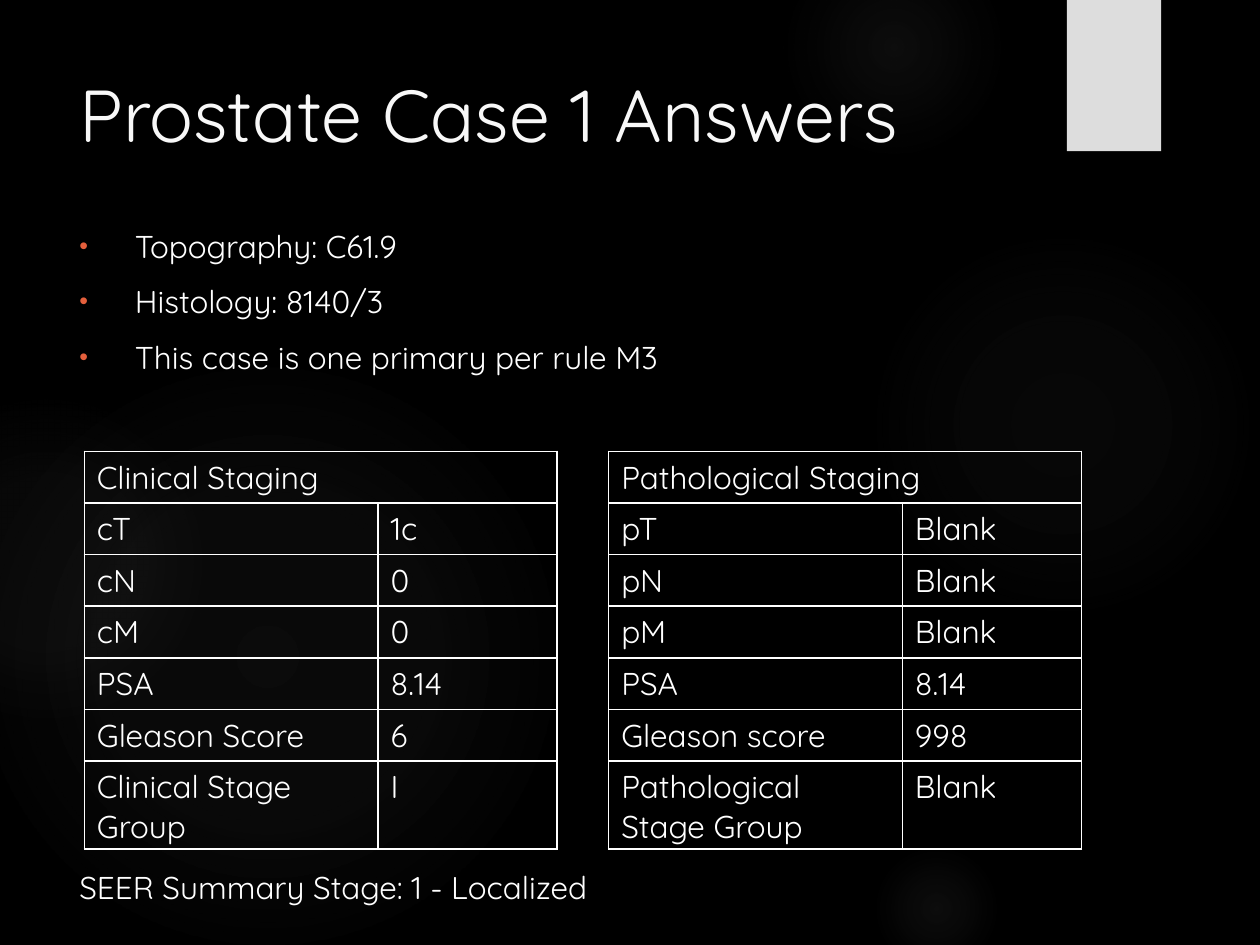
"""Build the prostate case answer slide with its two staging tables."""
from lxml.etree import SubElement
from pptx import Presentation
from pptx.dml.color import RGBColor
from pptx.enum.shapes import MSO_SHAPE
from pptx.oxml import parse_xml
from pptx.oxml.ns import nsdecls, qn
from pptx.util import Cm, Pt

BLACK = RGBColor(0x00, 0x00, 0x00)
WHITE = RGBColor(0xFF, 0xFF, 0xFF)
TITLE_WHITE = RGBColor(0xF8, 0xF8, 0xF8)
TAB_GREY = RGBColor(0xDD, 0xDD, 0xDD)
GLOW_GREY = RGBColor(0x5F, 0x5F, 0x5F)
BULLET_ORANGE = RGBColor(0xE4, 0x5F, 0x3C)

GLOWS = [
    (17.5, 4.65, 7.82, [(0, 7), (36, 6), (69, 0)]),
    (15.8, -1.27, 4.45, [(0, 14), (36, 7), (73, 0)]),
    (17.5, 16.94, 2.74, [(0, 14), (36, 7), (66, 0)]),
    (-0.43, 7.42, 11.63, [(0, 11), (36, 10), (75, 0)]),
    (-2.34, 8.05, 6.55, [(0, 8), (36, 8), (72, 0)]),
]
FACTS = ["Topography: C61.9", "Histology: 8140/3", "This case is one primary per rule M3"]
CLINICAL = [
    ("cT", "1c"), ("cN", "0"), ("cM", "0"), ("PSA", "8.14"),
    ("Gleason Score", "6"), ("Clinical Stage Group", "I"),
]
PATHOLOGICAL = [
    ("pT", "Blank"), ("pN", "Blank"), ("pM", "Blank"), ("PSA", "8.14"),
    ("Gleason score", "998"), ("Pathological Stage Group", "Blank"),
]


def write(p, text, size=18, color=WHITE, font="Quicksand"):
    r = p.add_run()
    r.text = text
    r.font.size = Pt(size)
    r.font.name = font
    r.font.color.rgb = color


class Deck:
    def __init__(self):
        self.prs = Presentation()
        self.prs.slide_width, self.prs.slide_height = Cm(25.4), Cm(19.05)
        self.s = self.prs.slides.add_slide(self.prs.slide_layouts[6])
        fill = self.s.background.fill
        fill.solid()
        fill.fore_color.rgb = BLACK

    def shape(self, kind, x, y, w, h):
        sp = self.s.shapes.add_shape(kind, Cm(x), Cm(y), Cm(w), Cm(h))
        sp.shadow.inherit = False
        sp.line.fill.background()
        return sp

    def glow(self, x, y, size, stops):
        sp = self.shape(MSO_SHAPE.OVAL, x, y, size, size)
        marks = "".join(
            f'<a:gs pos="{pos * 1000}"><a:srgbClr val="{GLOW_GREY}">'
            f'<a:alpha val="{alpha * 1000}"/></a:srgbClr></a:gs>'
            for pos, alpha in stops
        )
        grad = parse_xml(
            f'<a:gradFill {nsdecls("a")} rotWithShape="1"><a:gsLst>{marks}</a:gsLst>'
            '<a:path path="circle"><a:fillToRect l="50000" t="50000" r="50000" b="50000"/>'
            "</a:path></a:gradFill>"
        )
        sp._element.spPr.find(qn("a:prstGeom")).addnext(grad)

    def corner_tab(self, x, y, w, h):
        sp = self.shape(MSO_SHAPE.RECTANGLE, x, y, w, h)
        sp.fill.solid()
        sp.fill.fore_color.rgb = TAB_GREY
        effects = sp._element.spPr.find(qn("a:effectLst"))
        effects.append(parse_xml(
            f'<a:outerShdw {nsdecls("a")} blurRad="{Pt(3)}" dist="{Pt(2)}" dir="5400000" '
            f'rotWithShape="0"><a:srgbClr val="{BLACK}"><a:alpha val="45000"/></a:srgbClr>'
            "</a:outerShdw>"
        ))

    def text(self, x, y, w, h, lines, bullets=False, **style):
        tf = self.s.shapes.add_textbox(Cm(x), Cm(y), Cm(w), Cm(h)).text_frame
        tf.word_wrap = True
        for i, line in enumerate(lines):
            p = tf.paragraphs[0] if i == 0 else tf.add_paragraph()
            write(p, line, **style)
            if bullets:
                self.bullet(p, first=i == 0)

    def bullet(self, p, first):
        p.space_before = Pt(0 if first else 10)
        pPr = p._p.get_or_add_pPr()
        pPr.set("marL", str(Cm(1.12)))
        pPr.set("indent", str(Cm(-1.12)))
        SubElement(SubElement(pPr, qn("a:buClr")), qn("a:srgbClr"), val=str(BULLET_ORANGE))
        SubElement(pPr, qn("a:buSzPct"), val="79000")
        SubElement(pPr, qn("a:buFont"), typeface="Arial")
        SubElement(pPr, qn("a:buChar"), char="•")

    def table(self, x, y, heading, rows, widths=(5.92, 3.61), row_height=1.04):
        count = len(rows) + 1
        frame = self.s.shapes.add_table(
            count, len(widths), Cm(x), Cm(y), Cm(sum(widths)), Cm(row_height * count))
        tbl = frame.table
        tbl.first_row = tbl.horz_banding = False
        for column, width in zip(tbl.columns, widths):
            column.width = Cm(width)
        tbl.cell(0, 0).merge(tbl.cell(0, 1))
        for i, row in enumerate([(heading, ""), *rows]):
            tbl.rows[i].height = Cm(row_height)
            for j, value in enumerate(row):
                self.cell(tbl.cell(i, j), value)

    def cell(self, cell, value):
        if value:
            write(cell.text_frame.paragraphs[0], value)
        cell.fill.background()
        tcPr = cell._tc.get_or_add_tcPr()
        for i, side in enumerate(("lnL", "lnR", "lnT", "lnB")):
            tcPr.insert(i, parse_xml(
                f'<a:{side} {nsdecls("a")} w="{Pt(1)}"><a:solidFill>'
                f'<a:srgbClr val="{WHITE}"/></a:solidFill></a:{side}>'
            ))


def main():
    deck = Deck()
    for glow in GLOWS:
        deck.glow(*glow)
    deck.corner_tab(21.51, 0, 1.9, 3.05)
    deck.text(1.35, 1.27, 19.61, 3.89, ["Prostate Case 1 Answers"], size=42, color=TITLE_WHITE)
    deck.text(1.35, 4.45, 22.58, 3.81, FACTS, bullets=True)
    deck.table(1.7, 9.1, "Clinical Staging", CLINICAL)
    deck.table(12.27, 9.1, "Pathological Staging", PATHOLOGICAL)
    deck.text(1.35, 17.37, 18.62, 1.02, ["SEER Summary Stage: 1 - Localized"])
    deck.prs.save("out.pptx")


if __name__ == "__main__":
    main()
